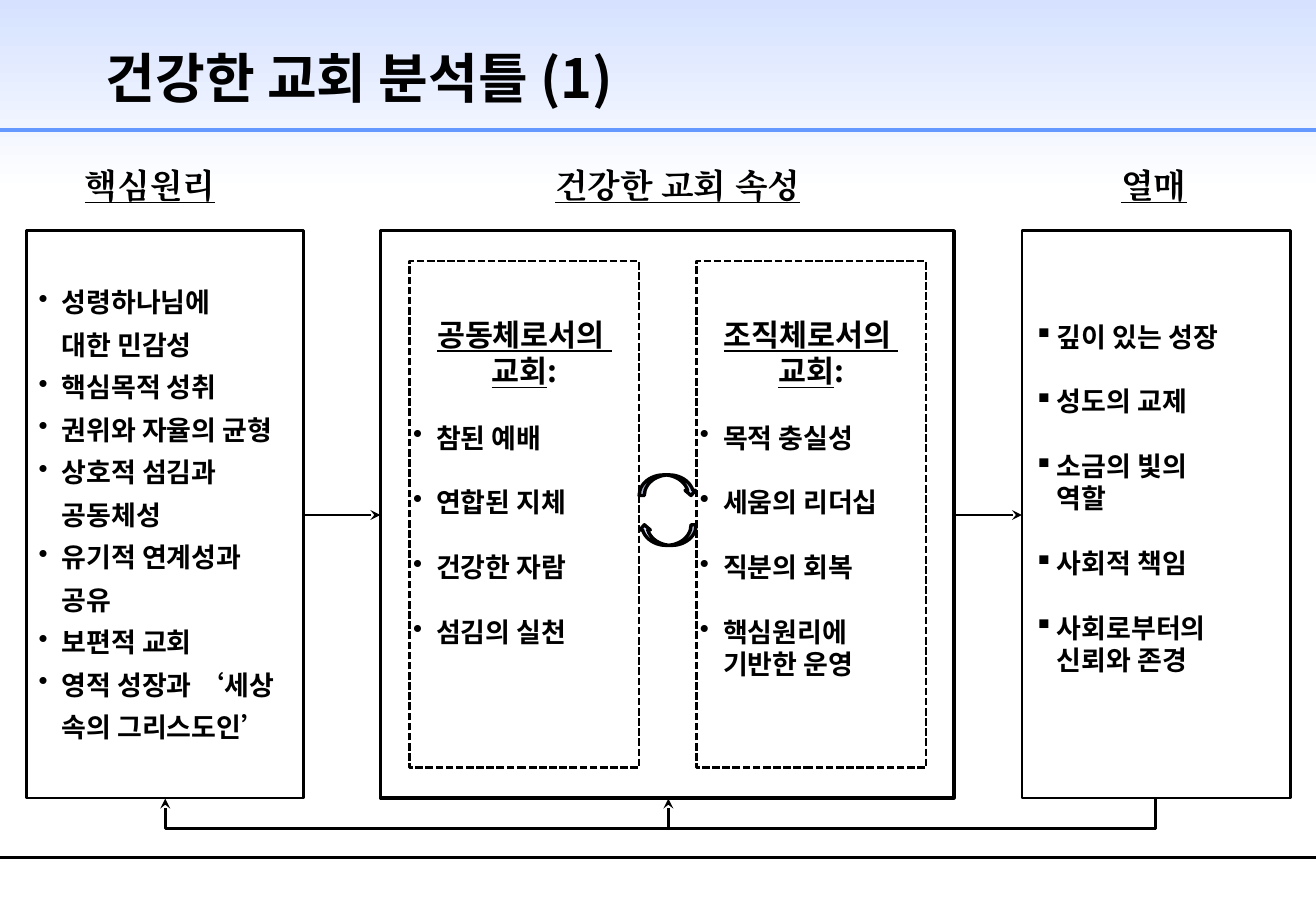
"""Builds the slide on the framework for analysing a healthy church."""
from lxml import etree
from pptx import Presentation
from pptx.dml.color import RGBColor
from pptx.enum.dml import MSO_LINE
from pptx.enum.shapes import MSO_CONNECTOR, MSO_SHAPE
from pptx.enum.text import MSO_ANCHOR, PP_ALIGN
from pptx.oxml.ns import qn
from pptx.util import Inches, Pt

RECT, CURVED = MSO_SHAPE.RECTANGLE, MSO_SHAPE.CURVED_DOWN_ARROW
STRAIGHT, ELBOW = MSO_CONNECTOR.STRAIGHT, MSO_CONNECTOR.ELBOW
MIDDLE, CENTER, LEFT = MSO_ANCHOR.MIDDLE, PP_ALIGN.CENTER, PP_ALIGN.LEFT
DASH = MSO_LINE.SQUARE_DOT
COLORS = {"ink": "000000", "paper": "FFFFFF", "band": "D5E1FF", "rule": "6699FF"}
SANS, SERIF = "Noto Sans CJK KR", "Times New Roman"
SLIDE_W, SLIDE_H = 10.83, 7.5
BOX_TOP, BOX_H, HANG, LINE = 1.9, 4.67, 0.19, 1.2

PRINCIPLES = ["성령하나님에\n대한 민감성", "핵심목적 성취", "권위와 자율의 균형",
              "상호적 섬김과\n공동체성", "유기적 연계성과\n공유", "보편적 교회",
              "영적 성장과 ‘세상\n속의 그리스도인’"]
FRUITS = ["깊이 있는 성장", "성도의 교제", "소금의 빛의\n역할", "사회적 책임",
          "사회로부터의\n신뢰와 존경"]
COMMUNITY = ["참된 예배", "연합된 지체", "건강한 자람", "섬김의 실천"]
ORGANISATION = ["목적 충실성", "세움의 리더십", "직분의 회복", "핵심원리에\n기반한 운영"]
HEADINGS = [("핵심원리", 0.6, 1.3), ("건강한 교회 속성", 4.47, 2.27), ("열매", 9.13, 0.75)]


def rgb(name):
    """Return the named colour."""
    return RGBColor.from_string(COLORS[name])


def add_text(p, text, size=16, font=SANS, underline=False):
    """Add a bold run to a paragraph."""
    r = p.add_run()
    r.text = text
    r.font.size, r.font.name, r.font.bold = Pt(size), font, True
    r.font.underline = underline
    r.font.color.rgb = rgb("ink")
    etree.SubElement(r.font._element, qn("a:ea"), typeface=font)


def next_paragraph(tf, size=16, before=0, align=LEFT):
    """Return the next free paragraph of a frame, with its spacing set."""
    p = tf.paragraphs[0] if not tf.paragraphs[0].runs else tf.add_paragraph()
    p.alignment, p.space_before, p.line_spacing = align, Pt(before), Pt(size * LINE)
    return p


def add_list(tf, items, bullet="•", first=0, gap=16 * LINE, inner=0):
    """Add bulleted items; further lines of an item hang under its text."""
    for i, item in enumerate(items):
        for j, line in enumerate(item.split("\n")):
            before = inner if j else gap if i else first
            p = next_paragraph(tf, before=before)
            pPr = p._p.get_or_add_pPr()
            pPr.set("marL", str(Inches(HANG)))
            pPr.set("indent", str(0 if j else -Inches(HANG)))
            if j:
                etree.SubElement(pPr, qn("a:buNone"))
            else:
                etree.SubElement(pPr, qn("a:buChar"), char=bullet)
            add_text(p, line)


def add_box(s, x, y, w, h, kind=RECT, fill="paper", weight=1.5, side=0.1, blanks=0):
    """Add an outlined shape, with room for blank lines below its text."""
    sp = s.shapes.add_shape(kind, Inches(x), Inches(y), Inches(w), Inches(h))
    sp.shadow.inherit = False
    sp.fill.solid()
    sp.fill.fore_color.rgb = rgb(fill)
    sp.line.color.rgb, sp.line.width = rgb("ink"), Pt(weight)
    tf = sp.text_frame
    tf.word_wrap, tf.vertical_anchor = True, MIDDLE
    tf.margin_left = tf.margin_right = Inches(side)
    tf.margin_bottom = Inches(0.05) + blanks * Pt(16 * LINE)
    return sp


def add_line(s, x1, y1, x2, y2, color="ink", weight=1.5, arrow=False, kind=STRAIGHT):
    """Add a connector, with a stealth arrowhead if asked."""
    c = s.shapes.add_connector(kind, Inches(x1), Inches(y1), Inches(x2), Inches(y2))
    c.line.color.rgb, c.line.width = rgb(color), Pt(weight)
    if arrow:
        etree.SubElement(c.line._get_or_add_ln(), qn("a:tailEnd"), type="stealth")
    etree.SubElement(c._element.spPr, qn("a:effectLst"))
    return c


def add_feedback(s, x1, x2, y, drop=0.26, thin=0.01):
    """Add an elbow arrow that runs down from x1, left, and up to x2."""
    mid, half = (x1 + x2) / 2, (x1 - x2) / 2
    c = add_line(s, mid - thin / 2, y - half, mid + thin / 2, y + half,
                 arrow=True, kind=ELBOW)
    spPr = c._element.spPr
    spPr.find(qn("a:xfrm")).set("rot", str(90 * 60000))
    geom = spPr.find(qn("a:prstGeom"))
    adjust = geom.find(qn("a:avLst"))
    if adjust is None:
        adjust = etree.SubElement(geom, qn("a:avLst"))
    etree.SubElement(adjust, qn("a:gd"), name="adj1",
                     fmla=f"val {round(drop / thin * 100000)}")


def add_band(s):
    """Add the shaded header band and the two rules across the slide."""
    band = add_box(s, 0, 0, SLIDE_W, 1.58)
    band.line.fill.background()
    band.fill.gradient()
    band.fill.gradient_angle = 270
    for stop, name in zip(band.fill.gradient_stops, ("band", "paper")):
        stop.color.rgb = rgb(name)
    for stop, position in zip(band.fill.gradient_stops, (0, 1)):
        stop.position = position
    add_line(s, 0, 1.07, SLIDE_W, 1.07, color="rule", weight=2.25)
    add_line(s, 0, 7.06, SLIDE_W, 7.06)


def add_title(s, text):
    """Place and fill the title above the header band."""
    title = s.shapes.title
    title.left, title.top = Inches(0.77), Inches(0.21)
    title.width, title.height = Inches(9.31), Inches(0.85)
    title.text_frame.vertical_anchor = MIDDLE
    p = title.text_frame.paragraphs[0]
    p.alignment = LEFT
    add_text(p, text, size=32)
    s.shapes._spTree.append(title._element)


def add_heading(s, text, x, w):
    """Add an underlined column heading."""
    tb = s.shapes.add_textbox(Inches(x), Inches(1.31), Inches(w), Inches(0.44))
    tb.text_frame.word_wrap = True
    add_text(tb.text_frame.paragraphs[0], text, size=20, font=SERIF, underline=True)


def add_aspect(s, x, name, items, blanks):
    """Add a dashed box with a two-line heading and a list."""
    sp = add_box(s, x, 2.15, 1.89, 4.17, side=0.03, blanks=blanks)
    sp.line.dash_style = DASH
    tf = sp.text_frame
    add_text(next_paragraph(tf, 18, align=CENTER), name, size=18, underline=True)
    p = next_paragraph(tf, 18, align=CENTER)
    add_text(p, "교회", size=18, underline=True)
    add_text(p, ":", size=18)
    add_list(tf, items, first=16 * LINE)


def main():
    """Build and save the slide."""
    prs = Presentation()
    prs.slide_width, prs.slide_height = Inches(SLIDE_W), Inches(SLIDE_H)
    s = prs.slides.add_slide(prs.slide_layouts[5])
    add_band(s)
    add_title(s, "건강한 교회 분석틀 (1)")
    for heading in HEADINGS:
        add_heading(s, *heading)

    principles = add_box(s, 0.22, BOX_TOP, 2.28, BOX_H)
    add_list(principles.text_frame, PRINCIPLES, first=6, gap=6, inner=6)
    fruits = add_box(s, 8.41, BOX_TOP, 2.21, BOX_H, blanks=1)
    add_list(fruits.text_frame, FRUITS, bullet="▪")
    add_box(s, 3.13, BOX_TOP, 4.72, BOX_H, weight=2)
    add_aspect(s, 3.37, "공동체로서의 ", COMMUNITY, blanks=2)
    add_aspect(s, 5.73, "조직체로서의 ", ORGANISATION, blanks=1)

    for x1, x2 in ((2.5, 3.13), (7.86, 8.41)):
        add_line(s, x1, 4.24, x2, 4.24, arrow=True)
    for target in (1.36, 5.5):
        add_feedback(s, 9.51, target, BOX_TOP + BOX_H)
    for y, turn in ((3.91, 0), (4.32, 180)):
        add_box(s, 5.26, y, 0.47, 0.17, CURVED, "band", 2).rotation = turn
    prs.save("out.pptx")


if __name__ == "__main__":
    main()
